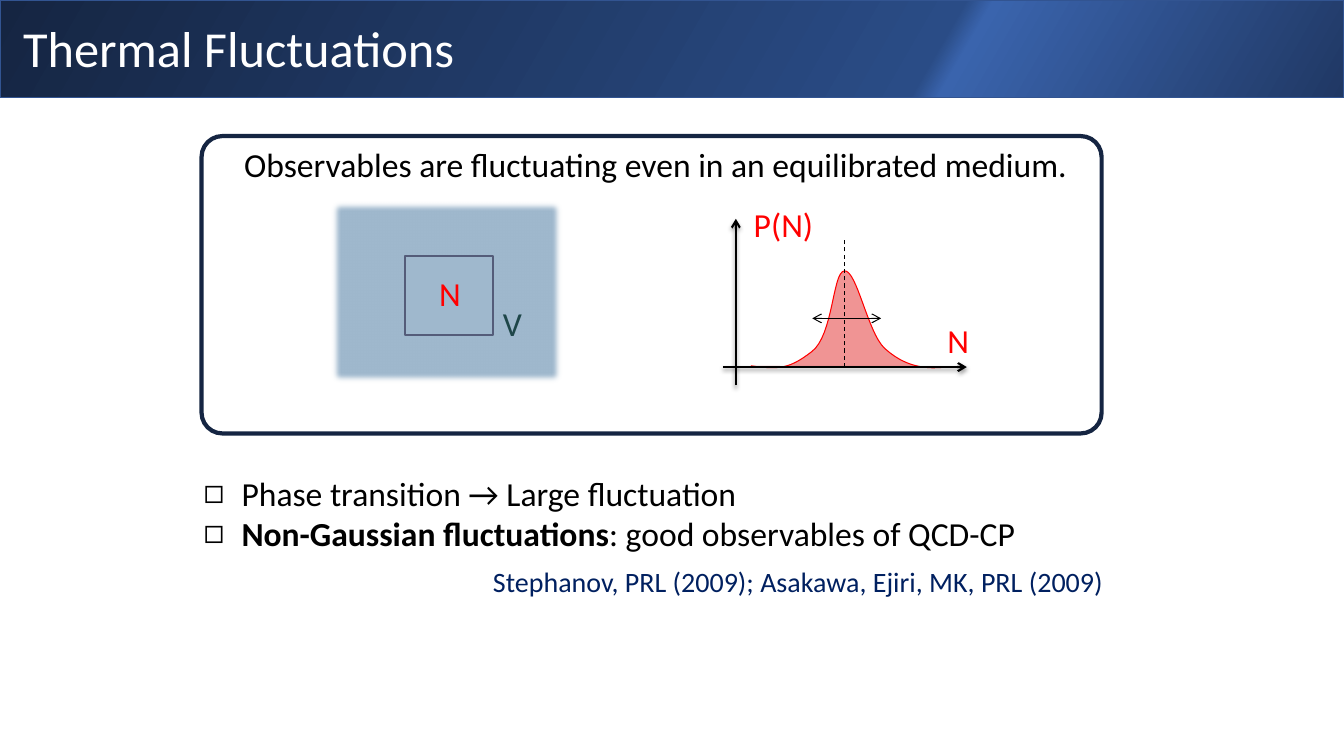
import lxml.etree
import pptx
import pptx.dml.color
import pptx.enum.dml
import pptx.enum.shapes
import pptx.enum.text
import pptx.oxml
import pptx.oxml.ns
import pptx.util

COLUMNS, ROWS = 32, 18
CELL = 381000
SHAPE = pptx.enum.shapes.MSO_SHAPE
ALIGN = pptx.enum.text.PP_ALIGN
ANCHOR = pptx.enum.text.MSO_ANCHOR
BLACK, RED, NAVY, MEDIUM = "000000", "FF0000", "152542", "9FB8CD"
BASELINE, MEAN = 8.74, 20.11
BELL_START = (17.88, 8.71)
BELL_CURVES = [
    ((18.58, 8.81), (18.82, 8.76), (19.32, 8.38)),
    ((19.85, 7.99), (19.82, 6.46), (MEAN, 6.45)),
    ((20.4, 6.43), (20.66, 7.9), (21.05, 8.28)),
    ((21.46, 8.66), (21.91, 8.81), (22.51, BASELINE)),
]


def grid(*cells):
    """Turn grid columns or rows into slide lengths."""
    return [pptx.util.Emu(round(cell * CELL)) for cell in cells]


def color(hex_code):
    """Return the colour for a hex string."""
    return pptx.dml.color.RGBColor.from_string(hex_code)


def assign(target, **values):
    """Set each given value as an attribute of the target."""
    for name, value in values.items():
        setattr(target, name, value)


def add_xml(parent, tag, **attributes):
    """Append a DrawingML element and return it."""
    element = lxml.etree.SubElement(parent, pptx.oxml.ns.qn("a:" + tag))
    for name, value in attributes.items():
        element.set(name, str(value))
    return element


def paint(shape, fill=None, line=None, weight=1):
    """Give a shape a flat fill and outline without shadow."""
    shape.shadow.inherit = False
    if fill:
        shape.fill.solid()
        shape.fill.fore_color.rgb = color(fill)
    else:
        shape.fill.background()
    if line:
        shape.line.color.rgb = color(line)
        shape.line.width = pptx.util.Pt(weight)
    else:
        shape.line.fill.background()


def add_box(slide, kind, place, **look):
    """Add a painted preset shape on the grid."""
    box = slide.shapes.add_shape(kind, *grid(*place))
    paint(box, **look)
    return box


def write(paragraph, text, size, hex_code, **font):
    """Add a formatted run to a paragraph."""
    run = paragraph.add_run()
    run.text = text
    assign(run.font, name="Calibri", size=pptx.util.Pt(size), **font)
    run.font.color.rgb = color(hex_code)


def add_label(slide, place, text, size=24, hex_code=RED, align=ALIGN.LEFT):
    """Add a one-line text box on the grid."""
    frame = slide.shapes.add_textbox(*grid(*place)).text_frame
    frame.word_wrap = False
    frame.paragraphs[0].alignment = align
    write(frame.paragraphs[0], text, size, hex_code)


def add_line(slide, start, end, weight=0.75, ends=(), dash=None, shadow=False):
    """Add a straight black line with optional arrowheads and shadow."""
    line = slide.shapes.add_connector(
        pptx.enum.shapes.MSO_CONNECTOR.STRAIGHT, *grid(*start, *end))
    line.line.color.rgb = color(BLACK)
    assign(line.line, width=pptx.util.Pt(weight), dash_style=dash)
    for end_tag in ends:
        add_xml(line.line._get_or_add_ln(), end_tag, type="arrow")
    effects = add_xml(line._element.spPr, "effectLst")
    if shadow:
        cast = add_xml(effects, "outerShdw", blurRad=38100, dist=25400,
                       dir=5400000, rotWithShape=0)
        add_xml(add_xml(cast, "srgbClr", val=BLACK), "alpha", val=40000)


def add_bell(slide):
    """Draw the probability distribution as a smooth outline."""
    points, start = [], BELL_START
    for curve in BELL_CURVES:
        for step in range(1, 17):
            t = step / 16
            weights = ((1 - t) ** 3, 3 * t * (1 - t) ** 2, 3 * t * t * (1 - t), t ** 3)
            points.append(grid(*(
                sum(w * p for w, p in zip(weights, axis))
                for axis in zip(start, *curve))))
        start = curve[-1]
    builder = slide.shapes.build_freeform(*grid(*BELL_START))
    builder.add_line_segments(points, close=False)
    paint(builder.convert_to_shape(), "F09494", RED, 0.75)


def add_band(slide):
    """Add the gradient title band behind everything else."""
    band = add_box(slide, SHAPE.RECTANGLE, (0, 0, COLUMNS, 2.33),
                   fill=NAVY, line="325491")
    properties = band._element.spPr
    flat = properties.find(pptx.oxml.ns.qn("a:solidFill"))
    gradient = add_xml(properties, "gradFill", rotWithShape=1)
    stops = add_xml(gradient, "gsLst")
    for share, shade in ((0, NAVY), (69, "2A4C86"), (71, "3A64AD"), (100, "203864")):
        add_xml(add_xml(stops, "gs", pos=share * 1000), "srgbClr", val=shade)
    add_xml(gradient, "lin", ang=1800000, scaled=0)
    properties.replace(flat, gradient)
    slide.shapes._spTree.insert(2, band._element)


def place_holder(holder, place, anchor):
    """Move a placeholder onto the grid and return its text frame."""
    left, top, width, height = grid(*place)
    assign(holder, left=left, top=top, width=width, height=height)
    assign(holder.text_frame, vertical_anchor=anchor, word_wrap=True,
           auto_size=pptx.enum.text.MSO_AUTO_SIZE.NONE)
    return holder.text_frame


def fill_title(slide, text):
    """Write the slide title."""
    frame = place_holder(slide.shapes.title, (0.31, 0.12, 27.6, 2.21), ANCHOR.MIDDLE)
    assign(frame.paragraphs[0], alignment=ALIGN.LEFT, line_spacing=0.9)
    write(frame.paragraphs[0], text, 36, "FFFFFF")


def fill_list(slide, items):
    """Write the bulleted list, each item a sequence of text and bold flag."""
    frame = place_holder(slide.placeholders[1], (4.61, 11.14, 20, 2.18), ANCHOR.TOP)
    for index, item in enumerate(items):
        paragraph = frame.add_paragraph() if index else frame.paragraphs[0]
        assign(paragraph, alignment=ALIGN.LEFT, space_before=pptx.util.Pt(0))
        properties = paragraph._p.get_or_add_pPr()
        properties.set("marL", "342900")
        properties.set("indent", "-342900")
        add_xml(properties, "buChar", char="◻")
        for text, bold in item:
            write(paragraph, text, 24, BLACK, bold=bold)


def add_medium(slide):
    """Draw the medium with its subvolume V holding N particles."""
    medium = add_box(slide, SHAPE.RECTANGLE, (7.82, 4.73, 5.62, 4.46), fill=MEDIUM)
    effects = medium._element.spPr.find(pptx.oxml.ns.qn("a:effectLst"))
    add_xml(effects, "softEdge", rad=63500)
    add_box(slide, SHAPE.RECTANGLE, (9.65, 6.1, 2.09, 1.87),
            fill=MEDIUM, line="545C79", weight=1.5)
    add_label(slide, (11.74, 7.1, 1.03, 1.2), "V", hex_code="1E4649")
    add_label(slide, (10.22, 6.38, 1.08, 1.2), "N")


def add_distribution(slide):
    """Draw the distribution P(N) with its axes, mean and width."""
    add_bell(slide)
    axis = {"weight": 1.5, "ends": ["tailEnd"], "shadow": True}
    add_line(slide, (17.52, 9.17), (17.52, 5.21), **axis)
    add_line(slide, (17.21, BASELINE), (23.02, BASELINE), **axis)
    add_line(slide, (MEAN, BASELINE), (MEAN, 5.69),
             dash=pptx.enum.dml.MSO_LINE.DASH)
    add_line(slide, (19.34, 7.58), (20.98, 7.58), ends=["headEnd", "tailEnd"])
    add_label(slide, (17.71, 4.73, 2.14, 1.2), "P(N)")
    add_label(slide, (22.32, 7.49, 1.08, 1.2), "N")


def main():
    """Build and save the slide."""
    deck = pptx.Presentation()
    assign(deck, slide_width=COLUMNS * CELL, slide_height=ROWS * CELL)
    slide = deck.slides.add_slide(deck.slide_layouts[1])
    add_band(slide)
    fill_title(slide, "Thermal Fluctuations")
    add_medium(slide)
    add_distribution(slide)
    add_label(slide, (5.47, 3.31, 20.28, 1.2),
              "Observables are fluctuating even in an equilibrated medium.",
              hex_code=BLACK, align=ALIGN.CENTER)
    fill_list(slide, [
        [("Phase transition → Large fluctuation", False)],
        [("Non-Gaussian fluctuations", True), (": good observables of QCD-CP", False)],
    ])
    add_label(slide, (11.5, 13.32, 15.14, 1.06),
              "Stephanov, PRL (2009); Asakawa, Ejiri, MK, PRL (2009)", 20, "002060")
    frame = add_box(slide, SHAPE.ROUNDED_RECTANGLE, (4.8, 3.24, 21.43, 7.08),
                    line=NAVY, weight=3)
    frame.adjustments[0] = 0.07
    deck.save("out.pptx")


if __name__ == "__main__":
    main()
